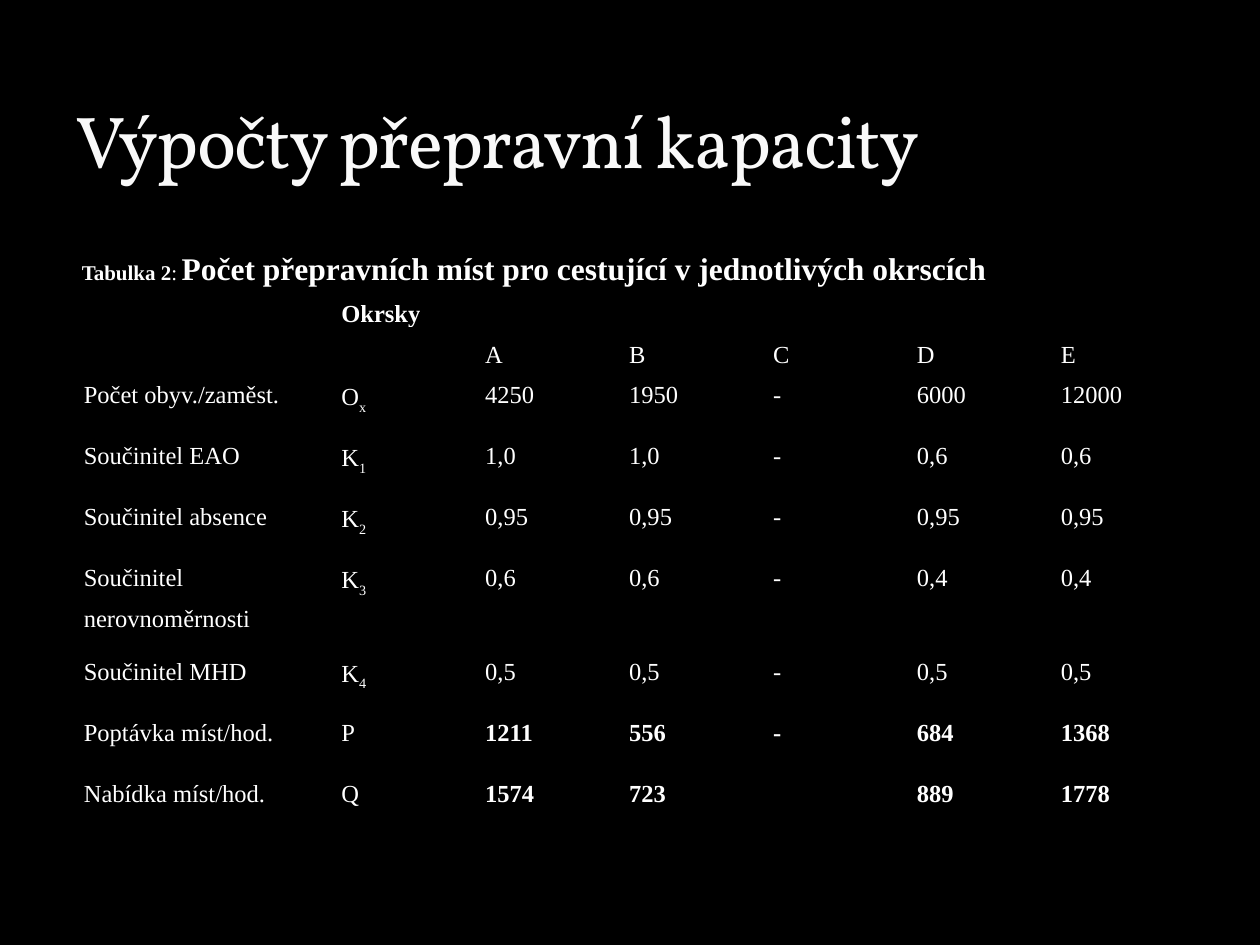
from dataclasses import dataclass

from lxml import etree
from pptx import Presentation
from pptx.dml.color import RGBColor
from pptx.enum.text import MSO_ANCHOR, PP_ALIGN
from pptx.oxml.ns import qn
from pptx.util import Cm, Pt

JUSTIFY = PP_ALIGN.JUSTIFY
MIDDLE, BOTTOM = MSO_ANCHOR.MIDDLE, MSO_ANCHOR.BOTTOM


@dataclass(frozen=True)
class Theme:
    black: str = "000000"
    white: str = "FFFFFF"
    title_color: str = "F9F9F9"
    title_font: str = "Vollkorn"
    body_font: str = "Times New Roman"
    title_size: float = 42
    caption_size: float = 18
    label_size: float = 12
    gap_size: float = 10
    table_size: float = 14


THEME = Theme()

HEADERS = ["", "", "A", "B", "C", "D", "E"]
# Label, symbol, subscript, values by district
ROWS = [
    ("Počet obyv./zaměst.", "O", "x", ["4250", "1950", "-", "6000", "12000"]),
    ("Součinitel EAO", "K", "1", ["1,0", "1,0", "-", "0,6", "0,6"]),
    ("Součinitel absence", "K", "2", ["0,95", "0,95", "-", "0,95", "0,95"]),
    ("Součinitel nerovnoměrnosti", "K", "3", ["0,6", "0,6", "-", "0,4", "0,4"]),
    ("Součinitel MHD", "K", "4", ["0,5", "0,5", "-", "0,5", "0,5"]),
    ("Poptávka míst/hod.", "P", "", ["1211", "556", "-", "684", "1368"]),
    ("Nabídka míst/hod.", "Q", "", ["1574", "723", "", "889", "1778"]),
]


def style_font(font, size, bold=False, name=THEME.body_font, color=THEME.white):
    font.size = Pt(size)
    font.bold = bold
    font.name = name
    font.color.rgb = RGBColor.from_string(color)


def add_run(p, text, size, bold=False, name=THEME.body_font, color=THEME.white):
    r = p.add_run()
    r.text = text
    style_font(r.font, size, bold, name, color)
    return r


def add_text_box(slide, box, anchor):
    tf = slide.shapes.add_textbox(*map(Cm, box)).text_frame
    tf.word_wrap = True
    tf.vertical_anchor = anchor
    return tf.paragraphs[0]


def add_title(slide, box):
    p = add_text_box(slide, box, BOTTOM)
    r = add_run(p, "Výpočty přepravní kapacity", THEME.title_size,
                name=THEME.title_font, color=THEME.title_color)
    r.font._element.set("spc", "-100")


def add_caption(slide, box):
    p = add_text_box(slide, box, MIDDLE)
    add_run(p, "Tabulka 2", THEME.label_size, bold=True)
    add_run(p, ":", THEME.label_size)
    add_run(p, " ", THEME.gap_size)
    add_run(p, "Počet přepravních míst pro cestující v jednotlivých okrscích",
            THEME.caption_size, bold=True)


def set_borders(cell, color, width):
    tc_pr = cell._tc.get_or_add_tcPr()
    for side in ("lnL", "lnR", "lnT", "lnB"):
        ln = etree.SubElement(tc_pr, qn(f"a:{side}"), w=str(Pt(width)))
        fill = etree.SubElement(ln, qn("a:solidFill"))
        etree.SubElement(fill, qn("a:srgbClr"), val=color)


def fill_cell(cell, text, bold=False, subscript=""):
    p = cell.text_frame.paragraphs[0]
    p.alignment = JUSTIFY
    p.line_spacing = 1.5
    if text:
        add_run(p, text, THEME.table_size, bold)
    else:
        p.font.size = Pt(THEME.table_size)
    if subscript:
        r = add_run(p, subscript, THEME.table_size, bold)
        r.font._element.set("baseline", "-25000")


def add_capacity_table(slide, box):
    left, top, width, height = box
    label_width, head_height, row_height, tall_height = 5.19, 0.74, 1.23, 1.88
    n_cols = len(HEADERS)
    table = slide.shapes.add_table(len(ROWS) + 2, n_cols, Cm(left), Cm(top),
                                   Cm(width), Cm(height)).table
    table.first_row = table.horz_banding = False

    # Grid
    for i, col in enumerate(table.columns):
        col.width = Cm((width - label_width) / (n_cols - 1) if i else label_width)
    heights = [head_height] * 2 + [
        tall_height if len(label) > 20 else row_height for label, *_ in ROWS]
    for row, h in zip(table.rows, heights):
        row.height = Cm(h)
    for cell in table.iter_cells():
        cell.margin_left = cell.margin_right = Cm(0.19)
        cell.margin_top = cell.margin_bottom = 0
        set_borders(cell, THEME.black, 1)
        cell.fill.background()

    # District headings
    table.cell(0, 1).merge(table.cell(0, n_cols - 1))
    fill_cell(table.cell(0, 0), "")
    fill_cell(table.cell(0, 1), "Okrsky", bold=True)
    for c, text in enumerate(HEADERS):
        fill_cell(table.cell(1, c), text)

    # Coefficients, then bold results (rows without a subscript)
    for r, (label, symbol, subscript, values) in enumerate(ROWS, start=2):
        fill_cell(table.cell(r, 0), label)
        fill_cell(table.cell(r, 1), symbol, subscript=subscript)
        for c, value in enumerate(values, start=2):
            fill_cell(table.cell(r, c), value, bold=not subscript)


def main():
    prs = Presentation()
    prs.slide_width, prs.slide_height = Cm(25.4), Cm(19.05)
    slide = prs.slides.add_slide(prs.slide_layouts[6])
    slide.background.fill.solid()
    slide.background.fill.fore_color.rgb = RGBColor.from_string(THEME.black)

    add_capacity_table(slide, (1.5, 5.79, 22.6, 11.02))
    add_title(slide, (1.27, 0.43, 22.86, 3.38))
    add_caption(slide, (1.4, 4.9, 21.6, 1.02))
    prs.save("out.pptx")


if __name__ == "__main__":
    main()
